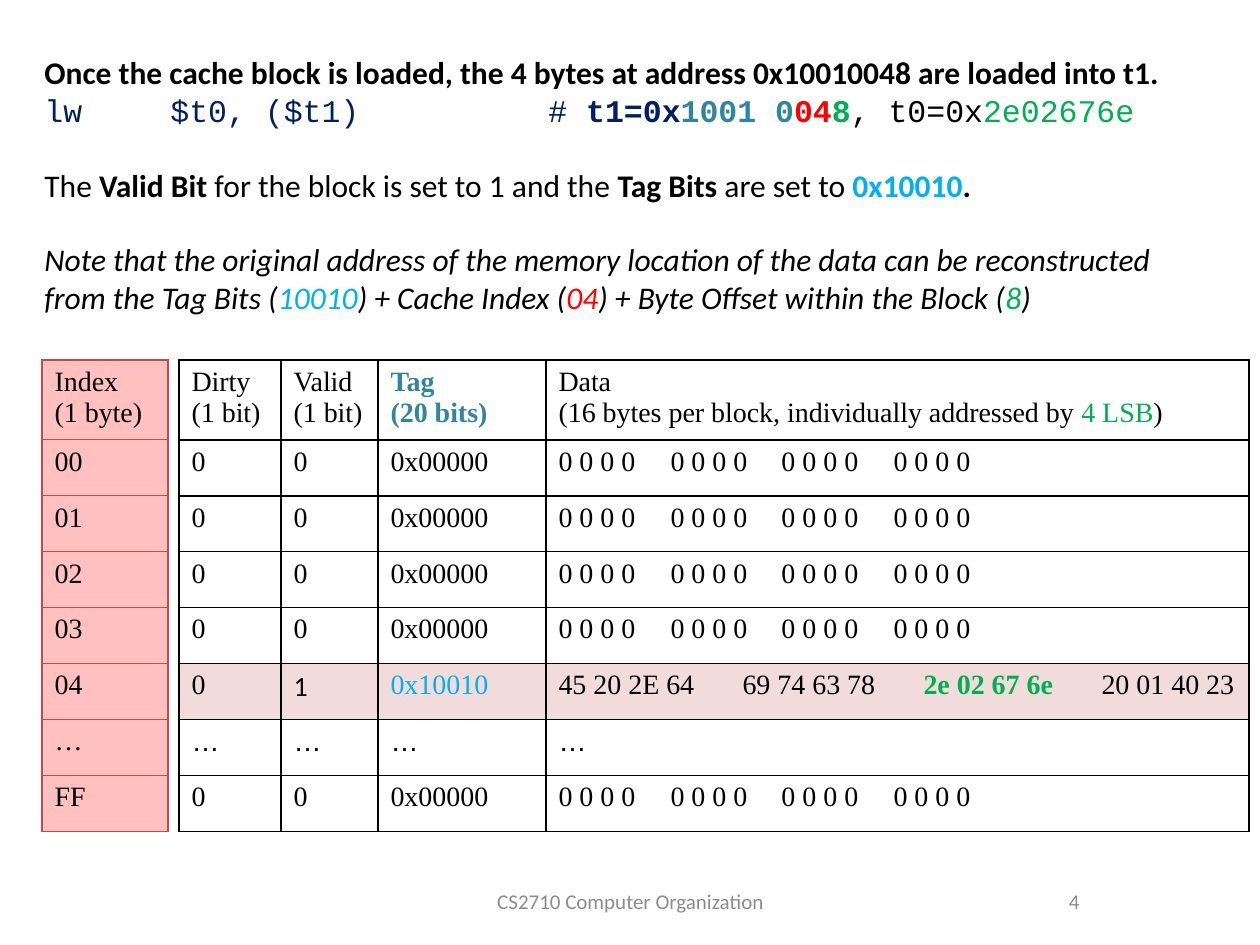
from pptx import Presentation
from pptx.dml.color import RGBColor as RGB
from pptx.enum.text import MSO_ANCHOR as ANCHOR, PP_ALIGN as ALIGN
from pptx.oxml.ns import qn
from pptx.util import Emu, Pt
from lxml.etree import SubElement

BLACK = RGB(0x00, 0x00, 0x00)
NAVY = RGB(0x00, 0x20, 0x60)
TEAL = RGB(0x31, 0x85, 0x9C)
RED = RGB(0xFF, 0x00, 0x00)
GREEN = RGB(0x00, 0xB0, 0x50)
SKY = RGB(0x00, 0xB0, 0xF0)
GRAY = RGB(0x8C, 0x8C, 0x8C)
BRICK = RGB(0xBF, 0x4C, 0x48)
PINK = RGB(0xFF, 0xC0, 0xBF)
ROSE = RGB(0xF2, 0xDC, 0xDB)

BODY = {"name": "Calibri", "size": Pt(18), "color": BLACK}
CODE = BODY | {"name": "Courier New"}
FOOTER = {"name": "Calibri", "size": Pt(12), "color": GRAY}
CELL = {"name": "Times New Roman", "size": Pt(16), "color": BLACK}
BOLD = {"bold": True}


def px(n):
    """Turn slide pixels into EMU."""
    return Emu(round(n * 914400 / 126))


class CacheSlide:
    """Holds the slide and draws its text boxes and tables."""

    def __init__(self, prs):
        self.slide = prs.slides.add_slide(prs.slide_layouts[6])

    def add_runs(self, p, runs, style, tabs=()):
        """Fill a paragraph with (text, format) runs, breaking lines at newlines."""
        if tabs:
            tab_list = SubElement(p._p.get_or_add_pPr(), qn("a:tabLst"))
            for pos in tabs:
                SubElement(tab_list, qn("a:tab"), pos=str(px(pos)), algn="l")
        for text, fmt in runs:
            for i, line in enumerate(text.split("\n")):
                if i:
                    p.add_line_break()
                r = p.add_run()
                r.text = line
                for key, value in (style | fmt).items():
                    if key == "color":
                        r.font.color.rgb = value
                    else:
                        setattr(r.font, key, value)

    def text(self, box, paragraphs, align=ALIGN.LEFT):
        """Add a middle-anchored box of (runs, style, space before, tabs) paragraphs."""
        tf = self.slide.shapes.add_textbox(*map(px, box)).text_frame
        tf.word_wrap = True
        tf.vertical_anchor = ANCHOR.MIDDLE
        for i, (runs, style, before, tabs) in enumerate(paragraphs):
            p = tf.add_paragraph() if i else tf.paragraphs[0]
            self.add_runs(p, runs, style, tabs)
            p.alignment = align
            if before:
                p.space_before = Pt(before)

    def border(self, cell, color, width):
        """Draw a solid line on all four sides of a cell."""
        tc_pr = cell._tc.get_or_add_tcPr()
        for side in ("lnL", "lnR", "lnT", "lnB"):
            ln = SubElement(tc_pr, qn(f"a:{side}"), w=str(Pt(width)))
            fill = SubElement(ln, qn("a:solidFill"))
            SubElement(fill, qn("a:srgbClr"), val=str(color))

    def table(self, left, top, cols, rows, cells, line, fills):
        """Add a bordered table of (runs, tabs) cells with one optional fill per row."""
        frame = self.slide.shapes.add_table(
            len(rows), len(cols), *map(px, (left, top, sum(cols), sum(rows))))
        table = frame.table
        table.first_row = table.horz_banding = False
        for col, width in zip(table.columns, cols):
            col.width = px(width)
        for i, (row, height) in enumerate(zip(table.rows, rows)):
            row.height = px(height)
            for cell, (runs, tabs) in zip(row.cells, cells[i]):
                self.border(cell, *line)
                if fills[i] is None:
                    cell.fill.background()
                else:
                    cell.fill.solid()
                    cell.fill.fore_color.rgb = fills[i]
                self.add_runs(cell.text_frame.paragraphs[0], runs, CELL, tabs)


def plain(*texts, **fmt):
    """Make one single-run cell for each text."""
    return [([(text, fmt)], ()) for text in texts]


def main():
    """Build the cache slide."""
    prs = Presentation()
    prs.slide_width, prs.slide_height = px(1260), px(945)
    s = CacheSlide(prs)

    load = [("lw\t$t0, ($t1)\t# ", {"color": NAVY}),
            ("t1=0x", BOLD | {"color": NAVY}),
            ("1001 0", BOLD | {"color": TEAL}),
            ("04", BOLD | {"color": RED}),
            ("8", BOLD | {"color": GREEN}),
            (", t0=0x", {}),
            ("2e02676e", {"color": GREEN})]
    bits = [("The ", {}), ("Valid Bit ", BOLD),
            ("for the block is set to 1 and the ", {}), ("Tag Bits", BOLD),
            (" are set to ", {}), ("0x10010", BOLD | {"color": SKY}), (".", BOLD)]
    note = [("Note that the original address of the memory location of the data "
             "can be reconstructed from the Tag Bits (", {}),
            ("10010", {"color": SKY}), (") + Cache Index (", {}),
            ("04", {"color": RED}), (") + Byte Offset within the Block (", {}),
            ("8", {"color": GREEN}), (")", {})]
    s.text((32, 32, 1176, 305), [
        ([("Once the cache block is loaded, the 4 bytes at address 0x10010048 "
           "are loaded into t1.", BOLD)], BODY, 0, ()),
        (load, CODE, 0, (126, 504)),
        (bits, BODY, 21, ()),
        (note, BODY | {"italic": True}, 21, ())])

    s.text((431, 876, 399, 50),
           [([("CS2710 Computer Organization", {})], FOOTER, 0, ())], ALIGN.CENTER)
    s.text((903, 876, 189, 50), [([("4", {})], FOOTER, 0, ())], ALIGN.RIGHT)

    zero_data = ([("\t".join(["0 0 0 0"] * 4), {})], (112, 223, 335))
    empty = plain("0", "0", "0x00000") + [zero_data]
    header = (plain("Dirty\n(1 bit)", "Valid\n(1 bit)")
              + plain("Tag\n(20 bits)", bold=True, color=TEAL)
              + [([("Data\n(16 bytes per block, individually addressed by ", {}),
                   ("4 LSB", {"color": GREEN}), (")", {})], ())])
    loaded = (plain("0") + plain("1", name="Calibri") + plain("0x10010", color=SKY)
              + [([("45 20 2E 64\t69 74 63 78\t", {}),
                   ("2e 02 67 6e\t", BOLD | {"color": GREEN}),
                   ("20 01 40 23", {})], (184, 365, 543))])
    skipped = plain(*"…" * 4, name="Arial")

    rows = [75] + [56] * 7
    s.table(179, 360, (102, 97, 168, 703), rows,
            [header] + [empty] * 4 + [loaded, skipped, empty],
            (BLACK, 1), [None] * 5 + [ROSE] + [None] * 2)
    labels = ("Index\n(1 byte)", "00", "01", "02", "03", "04", "…", "FF")
    s.table(42, 360, (126,), rows, [plain(label) for label in labels],
            (BRICK, 0.75), [PINK] * 8)

    prs.save("out.pptx")


if __name__ == "__main__":
    main()
